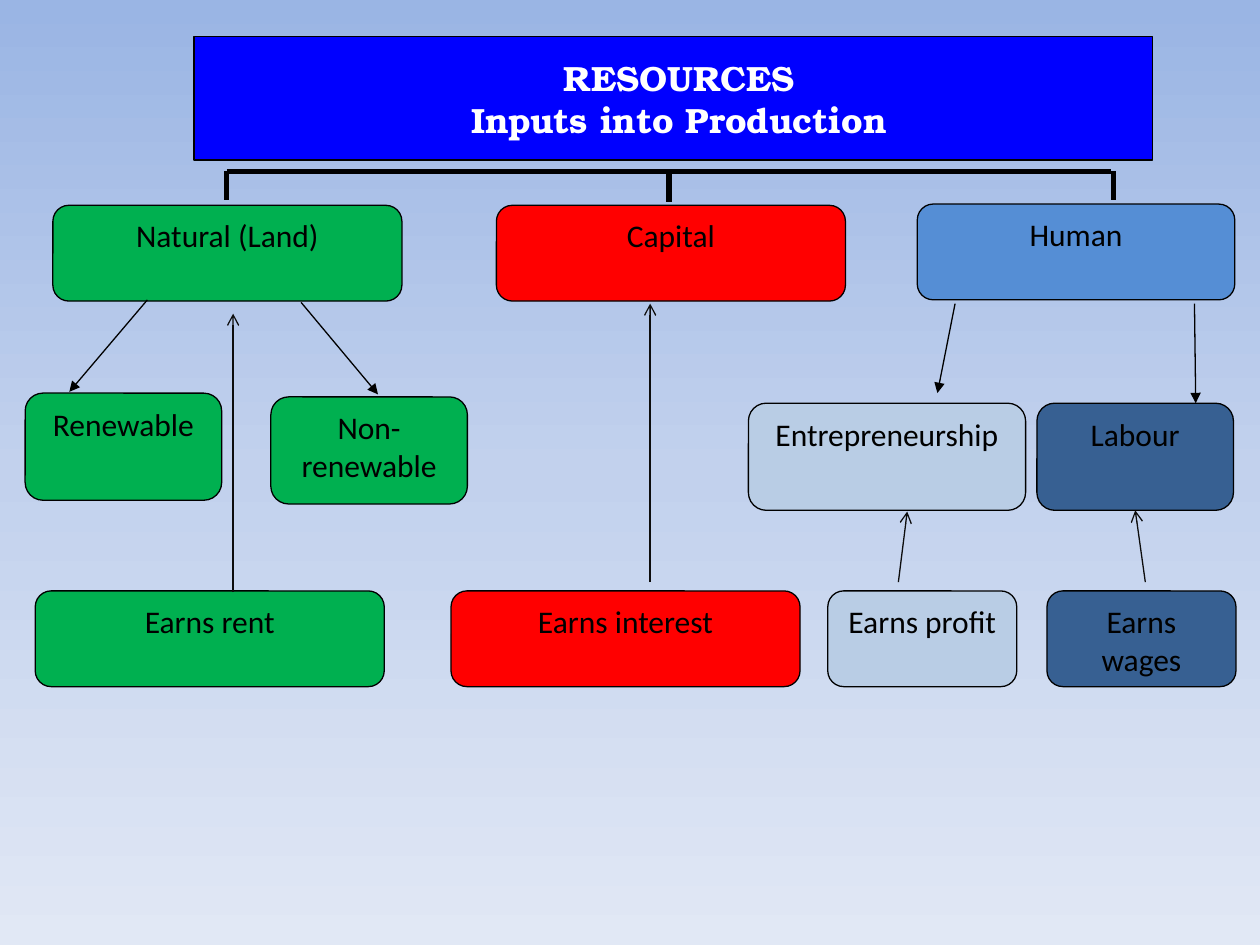
from copy import deepcopy

from lxml import etree
from pptx import Presentation
from pptx.dml.color import RGBColor
from pptx.enum import shapes, text
from pptx.oxml.ns import qn
from pptx.util import Inches, Pt

BLACK = RGBColor(0x00, 0x00, 0x00)
NEAR_BLACK = RGBColor(0x0D, 0x0D, 0x0D)
WHITE = RGBColor(0xFF, 0xFF, 0xFF)
TITLE_BLUE = RGBColor(0x00, 0x00, 0xFF)
GREEN = RGBColor(0x00, 0xB0, 0x50)
RED = RGBColor(0xFF, 0x00, 0x00)
MID_BLUE = RGBColor(0x55, 0x8E, 0xD5)
PALE_BLUE = RGBColor(0xB9, 0xCD, 0xE5)
DARK_BLUE = RGBColor(0x37, 0x60, 0x92)
SKY = [RGBColor(0x9A, 0xB5, 0xE4), RGBColor(0xC2, 0xD1, 0xED), RGBColor(0xE1, 0xE8, 0xF5)]

# Each row: box height, then (label, left, top, width, colour)
RESOURCES = (0.76, [
    ("Natural (Land)", 0.42, 1.63, 2.77, GREEN),
    ("Capital", 3.94, 1.63, 2.77, RED),
    ("Human", 7.28, 1.62, 2.52, MID_BLUE),
])
KINDS = (0.85, [
    ("Renewable", 0.2, 3.12, 1.56, GREEN),
    ("Non-renewable", 2.15, 3.15, 1.56, GREEN),
    ("Entrepreneurship", 5.94, 3.2, 2.2, PALE_BLUE),
    ("Labour", 8.23, 3.2, 1.56, DARK_BLUE),
])
EARNINGS = (0.76, [
    ("Earns rent", 0.28, 4.69, 2.77, GREEN),
    ("Earns interest", 3.58, 4.69, 2.77, RED),
    ("Earns profit", 6.57, 4.69, 1.5, PALE_BLUE),
    ("Earns wages", 8.31, 4.69, 1.5, DARK_BLUE),
])

# Lines: x1, y1, x2, y2
BRACKET = [(1.8, 1.36, 8.82, 1.36), (1.8, 1.36, 1.8, 1.59),
           (8.84, 1.36, 8.84, 1.59), (5.31, 1.37, 5.31, 1.6)]
DIVISION_ARROWS = [(1.17, 2.38, 0.55, 3.11), (2.39, 2.4, 3, 3.13),
                   (7.58, 2.41, 7.44, 3.12), (9.48, 2.41, 9.49, 3.2)]
EARNING_ARROWS = [(1.85, 4.7, 1.85, 2.49), (5.16, 4.62, 5.16, 2.41),
                  (7.13, 4.62, 7.2, 4.06), (9.09, 4.62, 9.01, 4.05)]


def paint_background(page):
    fill = page.background.fill
    fill.gradient()
    fill.gradient_angle = 270
    stop_list = page.element.find(".//" + qn("a:gsLst"))
    stop_list.insert(1, deepcopy(stop_list[0]))
    for index, (stop, color) in enumerate(zip(fill.gradient_stops, SKY)):
        stop.color.rgb = color
        stop.position = index / 2


def paint_shape(shape, color):
    shape.fill.solid()
    shape.fill.fore_color.rgb = color
    shape.line.color.rgb = BLACK
    shape.line.width = Pt(0.75)


def style_paragraph(para, font_name, size, color, bold=False):
    para.alignment = text.PP_ALIGN.CENTER
    para.font.name = font_name
    para.font.size = Pt(size)
    para.font.color.rgb = color
    para.font.bold = bold


def set_title(page, lines):
    title = page.shapes.title
    title.left, title.top = Inches(1.54), Inches(0.29)
    title.width, title.height = Inches(7.61), Inches(0.98)
    paint_shape(title, TITLE_BLUE)
    frame = title.text_frame
    frame.text = "\n".join(lines)
    frame.auto_size = text.MSO_AUTO_SIZE.NONE
    frame.vertical_anchor = text.MSO_ANCHOR.MIDDLE
    frame.margin_left = Inches(0.19)
    for para in frame.paragraphs:
        style_paragraph(para, "TeX Gyre Bonum", 20, WHITE, bold=True)


def add_box(page, label, left, top, width, height, color):
    box = page.shapes.add_shape(
        shapes.MSO_SHAPE.ROUNDED_RECTANGLE,
        Inches(left), Inches(top), Inches(width), Inches(height))
    box.shadow.inherit = False
    paint_shape(box, color)
    frame = box.text_frame
    frame.text = label
    frame.word_wrap = True
    frame.vertical_anchor = text.MSO_ANCHOR.TOP
    style_paragraph(frame.paragraphs[0], "Calibri", 18, BLACK)


def add_line(page, ends, color=BLACK, width=0.75, head=None):
    line = page.shapes.add_connector(
        shapes.MSO_CONNECTOR.STRAIGHT, *(Inches(value) for value in ends))
    line.line.color.rgb = color
    line.line.width = Pt(width)
    properties = line.element.spPr
    if head:
        outline = properties.find(qn("a:ln"))
        etree.SubElement(outline, qn("a:tailEnd"), type=head)
    etree.SubElement(properties, qn("a:effectLst"))


def main():
    deck = Presentation()
    deck.slide_width, deck.slide_height = Inches(10), Inches(7.5)
    page = deck.slides.add_slide(deck.slide_layouts.get_by_name("Title Only"))
    paint_background(page)
    set_title(page, ["RESOURCES", "Inputs into Production"])

    # Bracket from the title to the three resources
    for ends in BRACKET:
        add_line(page, ends, width=3)

    # Boxes, row by row
    for height, boxes in (RESOURCES, KINDS, EARNINGS):
        for label, left, top, width, color in boxes:
            add_box(page, label, left, top, width, height, color)

    # Arrows down to the kinds, and up from the earnings
    for ends in DIVISION_ARROWS:
        add_line(page, ends, head="triangle")
    for ends in EARNING_ARROWS:
        add_line(page, ends, color=NEAR_BLACK, head="arrow")

    deck.save("out.pptx")


if __name__ == "__main__":
    main()
